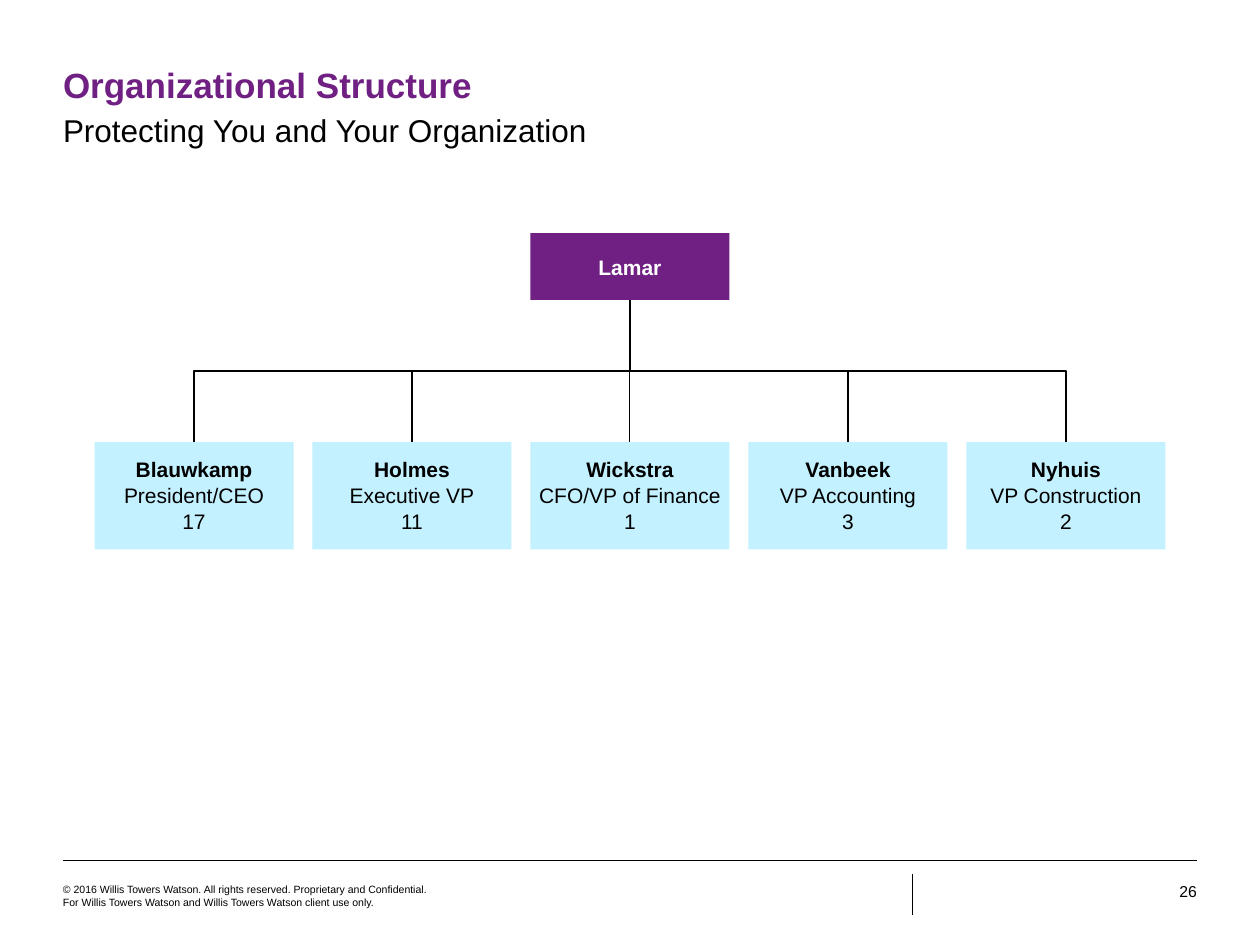
from pptx import Presentation
from pptx.dml.color import RGBColor
from pptx.enum.shapes import MSO_CONNECTOR, MSO_SHAPE
from pptx.enum.text import MSO_ANCHOR, MSO_AUTO_SIZE, PP_ALIGN
from pptx.oxml.ns import qn
from pptx.util import Inches, Pt
from lxml.etree import SubElement

PURPLE = RGBColor(0x70, 0x20, 0x82)
LIGHT_BLUE = RGBColor(0xC3, 0xF1, 0xFF)
BLACK = RGBColor(0, 0, 0)
WHITE = RGBColor(0xFF, 0xFF, 0xFF)

OFFICERS = [
    ("Blauwkamp", "President/CEO", "17"),
    ("Holmes", "Executive VP", "11"),
    ("Wickstra", "CFO/VP of Finance", "1"),
    ("Vanbeek", "VP Accounting", "3"),
    ("Nyhuis", "VP Construction", "2"),
]
BOX_W, BOX_H, PITCH = 1.58, 0.85, 1.73
LEFT, ROW_TOP = 0.75, 3.51
HEAD_TOP, HEAD_H = 1.85, 0.53
MIDDLE = 5


def write(p, text, size=12, color=BLACK, bold=False, align=PP_ALIGN.LEFT,
          spacing=1.0, after=0, font="Arial"):
    """Put one formatted run into a paragraph."""
    p.alignment = align
    p.line_spacing = spacing
    p.space_before, p.space_after = Pt(0), Pt(after)
    r = p.add_run()
    r.text = text
    r.font.name, r.font.size, r.font.bold = font, Pt(size), bold
    r.font.color.rgb = color


class OrgSlide:
    """Holds the current slide and draws its elements in one style."""

    def __init__(self, prs):
        self.s = prs.slides.add_slide(prs.slide_layouts[1])

    def frame(self, sp, inset=0, wrap=True, anchor=MSO_ANCHOR.TOP):
        tf = sp.text_frame
        tf.auto_size = MSO_AUTO_SIZE.NONE
        tf.word_wrap = wrap
        tf.vertical_anchor = anchor
        tf.margin_left = tf.margin_right = Inches(inset)
        tf.margin_top = tf.margin_bottom = Inches(inset)
        return tf

    def placeholder(self, idx, top, height, text, **fmt):
        sp = self.s.placeholders[idx]
        sp.left, sp.top = Inches(0.5), Inches(top)
        sp.width, sp.height = Inches(9), Inches(height)
        p = self.frame(sp).paragraphs[0]
        pPr = p._p.get_or_add_pPr()
        pPr.set("marL", "0")
        pPr.set("indent", "0")
        SubElement(pPr, qn("a:buNone"))
        write(p, text, **fmt)

    def text(self, x, y, w, h, text, **fmt):
        sp = self.s.shapes.add_textbox(Inches(x), Inches(y), Inches(w), Inches(h))
        write(self.frame(sp).paragraphs[0], text, **fmt)

    def box(self, x, y, h, lines, fill, color=BLACK, anchor=MSO_ANCHOR.TOP):
        sp = self.s.shapes.add_shape(
            MSO_SHAPE.RECTANGLE, Inches(x), Inches(y), Inches(BOX_W), Inches(h))
        sp.shadow.inherit = False
        sp.fill.solid()
        sp.fill.fore_color.rgb = fill
        sp.line.fill.background()
        tf = self.frame(sp, 0.1, False, anchor)
        for i, line in enumerate(lines):
            p = tf.add_paragraph() if i else tf.paragraphs[0]
            write(p, line, color=color, bold=i == 0,
                  align=PP_ALIGN.CENTER, spacing=1.05)

    def line(self, x1, y1, x2, y2, width=0.75, kind=MSO_CONNECTOR.STRAIGHT):
        c = self.s.shapes.add_connector(
            kind, Inches(x1), Inches(y1), Inches(x2), Inches(y2))
        c.line.color.rgb = BLACK
        c.line.width = Pt(width)
        SubElement(c._element.spPr, qn("a:effectLst"))
        return c

    def elbow(self, x1, y1, x2, y2):
        side = 1 if x2 >= x1 else -1
        cx, cy = (x1 + x2) / 2, (y1 + y2) / 2
        dx, dy = side * (y2 - y1) / 2, abs(x2 - x1) / 2
        c = self.line(cx + dx, cy - dy, cx - dx, cy + dy, kind=MSO_CONNECTOR.ELBOW)
        angle = 270 if side > 0 else 90
        c._element.spPr.find(qn("a:xfrm")).set("rot", str(angle * 60000))


def main():
    prs = Presentation()
    prs.slide_width, prs.slide_height = Inches(10), Inches(7.5)
    org = OrgSlide(prs)

    org.line(0.5, 6.83, 9.5, 6.83, width=0.25)
    org.line(7.24, 6.94, 7.24, 7.26)
    org.placeholder(0, 0.5, 0.34, "Organizational Structure",
                    size=20, color=PURPLE, bold=True)
    org.placeholder(1, 0.88, 0.3, "Protecting You and Your Organization",
                    size=18, after=3.5)
    org.text(0.5, 7, 2.96, 0.27,
             "© 2016 Willis Towers Watson. All rights reserved. "
             "Proprietary and Confidential. For Willis Towers Watson and "
             "Willis Towers Watson client use only.", size=6, spacing=1.05)
    org.text(9.08, 7, 0.42, 0.15, "26", size=9, align=PP_ALIGN.RIGHT)

    head_bottom = HEAD_TOP + HEAD_H
    bus = (head_bottom + ROW_TOP) / 2
    for i, officer in enumerate(OFFICERS):
        x = LEFT + i * PITCH
        center = x + BOX_W / 2
        if i % 2:
            org.line(center, bus, center, ROW_TOP)
        else:
            org.elbow(MIDDLE, head_bottom, center, ROW_TOP)
        org.box(x, ROW_TOP, BOX_H, officer, LIGHT_BLUE)
    org.box(LEFT + 2 * PITCH, HEAD_TOP, HEAD_H, ["Lamar"], PURPLE, WHITE,
            MSO_ANCHOR.MIDDLE)

    prs.save("out.pptx")


if __name__ == "__main__":
    main()
